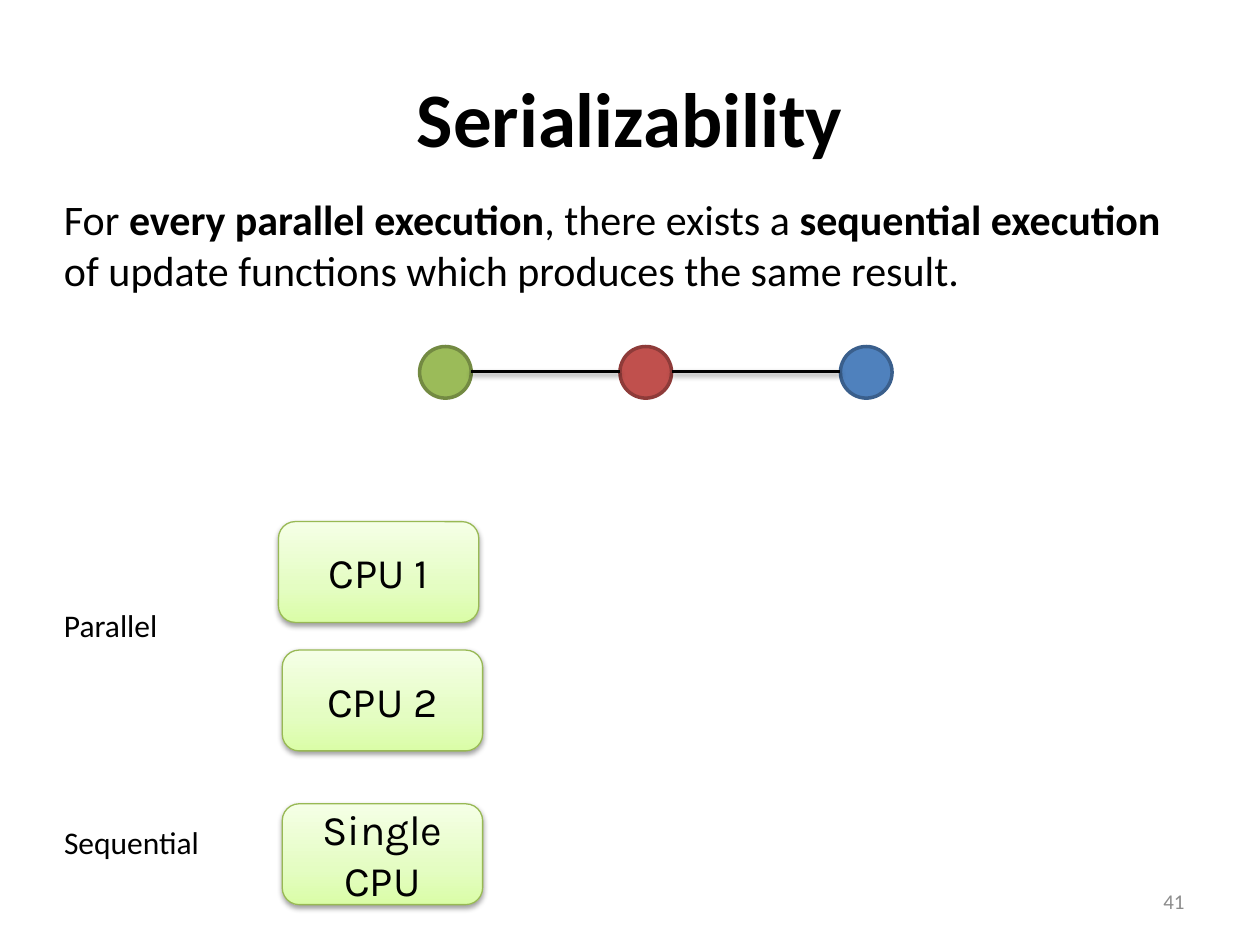
from copy import deepcopy
from dataclasses import dataclass

from lxml import etree
from pptx import Presentation
from pptx import util as u
from pptx.dml.color import RGBColor
from pptx.enum import shapes, text
from pptx.oxml import parse_xml
from pptx.oxml.ns import nsdecls, qn

PX = u.Inches(1) // 100


@dataclass(frozen=True)
class Theme:
    """Colours, fonts and type sizes of the slide."""
    font: str = "Calibri"
    cpu_font: str = "Karla"
    ink: str = "000000"
    muted: str = "8C8C8C"
    title: int = 44
    body: int = 24
    label: int = 18
    number: int = 12
    green: tuple = ("9BBB59", "738A42")
    red: tuple = ("C0504D", "8E3B39")
    blue: tuple = ("4F81BD", "3A5F8C")
    cpu_line: str = "98B954"
    cpu_stops: tuple = ((0, "F5FFE6"), (0.65, "E4FDC2"), (1, "DAFDA7"))


T = Theme()


def px(*lengths):
    """Turn px into EMU."""
    return [n * PX for n in lengths]


def rgb(code):
    """Turn a hex code into a colour."""
    return RGBColor.from_string(code)


def style(p, size, font=T.font, color=T.ink, align=text.PP_ALIGN.LEFT):
    """Format a whole paragraph."""
    p.font.size, p.font.name = u.Pt(size), font
    p.font.color.rgb = rgb(color)
    p.alignment = align


def outline(sp, color, width):
    """Set the line colour and width."""
    sp.line.color.rgb = rgb(color)
    sp.line.width = u.Pt(width)


def soft_shadow(sp):
    """Give a shape or connector a soft shadow below it."""
    effects = etree.SubElement(sp._element.spPr, qn("a:effectLst"))
    effects.append(parse_xml(
        f'<a:outerShdw {nsdecls("a")} blurRad="40000" dist="20000" '
        'dir="5400000" rotWithShape="0"><a:srgbClr val="000000">'
        '<a:alpha val="38000"/></a:srgbClr></a:outerShdw>'))


def add_title(slide, box, words):
    """Place the slide title."""
    sp = slide.shapes.title
    sp.left, sp.top, sp.width, sp.height = px(*box)
    tf = sp.text_frame
    tf.text, tf.vertical_anchor = words, text.MSO_ANCHOR.MIDDLE
    style(tf.paragraphs[0], T.title, align=text.PP_ALIGN.CENTER)
    tf.paragraphs[0].font.bold = True


def add_text(slide, box, runs, size, anchor=text.MSO_ANCHOR.TOP, **look):
    """Place a text box with (words, bold) runs."""
    tf = slide.shapes.add_textbox(*px(*box)).text_frame
    tf.word_wrap, tf.vertical_anchor = True, anchor
    p = tf.paragraphs[0]
    style(p, size, **look)
    for words, bold in runs:
        r = p.add_run()
        r.text, r.font.bold = words, bold


def add_graph(slide, box, vertices):
    """Draw a row of vertices, given as (offset, colours), joined by edges."""
    left, top, size = box
    for offset, (fill, line) in vertices:
        sp = slide.shapes.add_shape(
            shapes.MSO_SHAPE.OVAL, *px(left + offset, top, size, size))
        sp.fill.solid()
        sp.fill.fore_color.rgb = rgb(fill)
        outline(sp, line, 2)
        sp.shadow.inherit = False
    middle = top + size // 2
    for (start, _), (end, _) in zip(vertices, vertices[1:]):
        edge = slide.shapes.add_connector(
            shapes.MSO_CONNECTOR.STRAIGHT,
            *px(left + start + size, middle, left + end, middle))
        outline(edge, T.ink, 2)
        soft_shadow(edge)


def add_cpu(slide, box, lines):
    """Draw a processor box with one paragraph per line."""
    sp = slide.shapes.add_shape(shapes.MSO_SHAPE.ROUNDED_RECTANGLE, *px(*box))
    sp.fill.gradient()
    sp.fill.gradient_angle = 270
    stops = sp._element.spPr.find(".//" + qn("a:gsLst"))
    stops.append(deepcopy(stops[-1]))
    for stop, (position, color) in zip(sp.fill.gradient_stops, T.cpu_stops):
        stop.position, stop.color.rgb = position, rgb(color)
    outline(sp, T.cpu_line, 0.75)
    soft_shadow(sp)
    tf = sp.text_frame
    tf.word_wrap, tf.vertical_anchor = False, text.MSO_ANCHOR.MIDDLE
    tf.text = "\n".join(lines)
    for p in tf.paragraphs:
        style(p, T.body, T.cpu_font, align=text.PP_ALIGN.CENTER)


def add_schedule(slide, box, name, label_top, cpus):
    """Place a schedule label and its processors, given as (x, y, lines)."""
    left, top, label_width = box
    add_text(slide, (left, top + label_top, label_width, 51), [(name, False)], T.label)
    for x, y, lines in cpus:
        add_cpu(slide, (left + x, top + y, 159, 80), lines)


def main():
    """Build the slide and save it."""
    prs = Presentation()
    prs.slide_width, prs.slide_height = px(1000, 750)
    slide = prs.slides.add_slide(prs.slide_layouts[5])
    add_title(slide, (50, 30, 900, 125), "Serializability")
    add_text(slide, (41, 149, 900, 91), [
        ("For ", False),
        ("every parallel execution", True),
        (", there exists a ", False),
        ("sequential execution ", True),
        ("of update functions which produces the same result.", False),
    ], T.body)
    add_graph(slide, (333, 275, 41), [(0, T.green), (159, T.red), (334, T.blue)])
    add_schedule(slide, (41, 414, 126), "Parallel", 62,
                 [(180, 0, ["CPU 1"]), (183, 102, ["CPU 2"])])
    add_schedule(slide, (41, 638, 175), "Sequential", 10,
                 [(183, 0, ["Single", "CPU"])])
    add_text(slide, (717, 695, 233, 40), [("41", False)], T.number,
             text.MSO_ANCHOR.MIDDLE, color=T.muted, align=text.PP_ALIGN.RIGHT)
    prs.save("out.pptx")


if __name__ == "__main__":
    main()
